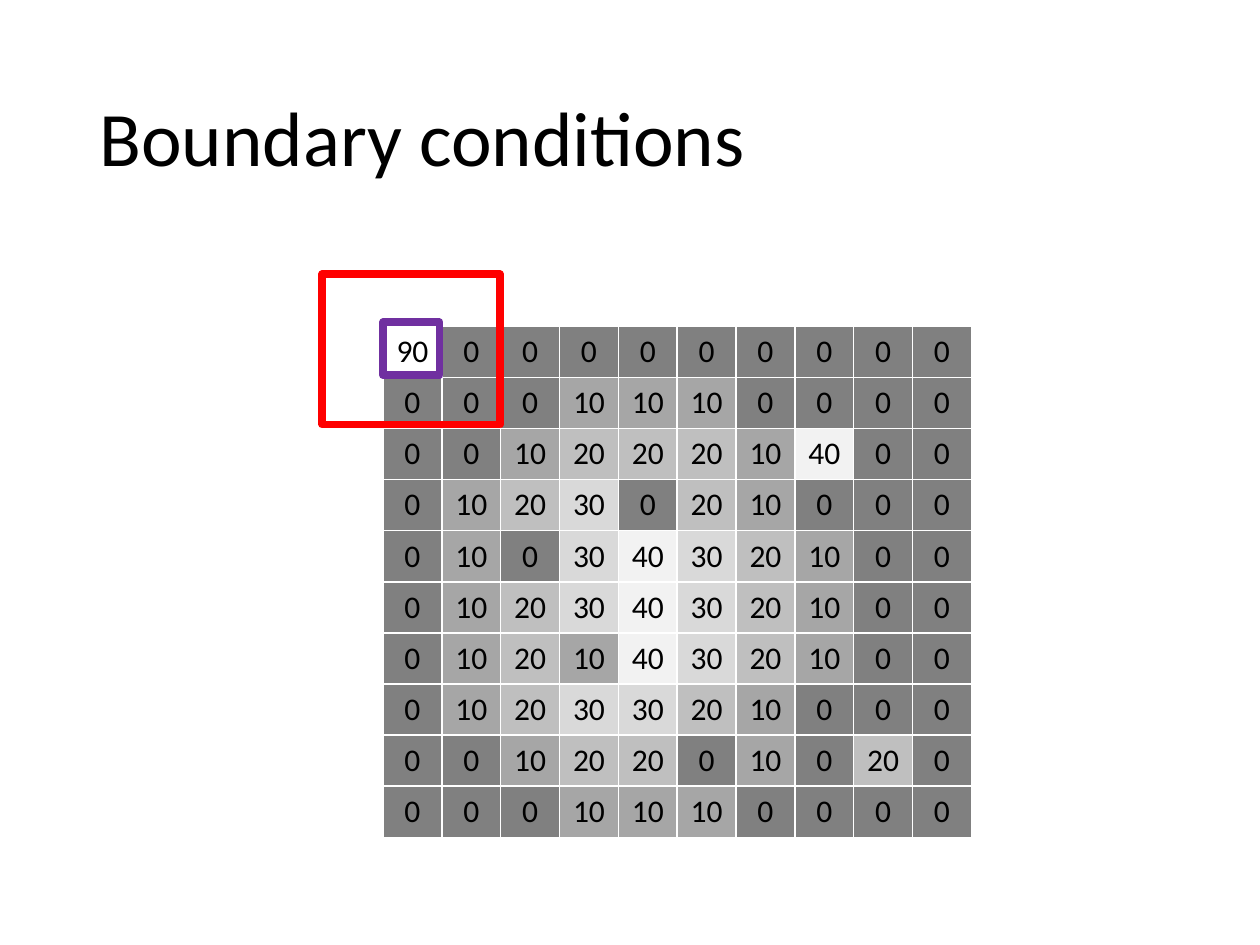
from dataclasses import dataclass

from lxml import etree
from pptx import Presentation
from pptx import util as u
from pptx.dml.color import RGBColor
from pptx.enum import shapes, text
from pptx.oxml import ns

COLORS = {"text": "000000", "border": "FFFFFF", "pixel": "7030A0", "window": "FF0000"}
GRAYS = {0: "808080", 10: "A6A6A6", 20: "BFBFBF", 30: "D9D9D9", 40: "F2F2F2", 90: "FFFFFF"}
FONT = "Calibri"

PIXELS = [
    [90, 0, 0, 0, 0, 0, 0, 0, 0, 0],
    [0, 0, 0, 10, 10, 10, 0, 0, 0, 0],
    [0, 0, 10, 20, 20, 20, 10, 40, 0, 0],
    [0, 10, 20, 30, 0, 20, 10, 0, 0, 0],
    [0, 10, 0, 30, 40, 30, 20, 10, 0, 0],
    [0, 10, 20, 30, 40, 30, 20, 10, 0, 0],
    [0, 10, 20, 10, 40, 30, 20, 10, 0, 0],
    [0, 10, 20, 30, 30, 20, 10, 0, 0, 0],
    [0, 0, 10, 20, 20, 0, 10, 0, 20, 0],
    [0, 0, 0, 10, 10, 10, 0, 0, 0, 0],
]


@dataclass
class Grid:
    left: float
    top: float
    column: float
    row: float


@dataclass
class Frame:
    """An outline placed in columns and rows of the pixel grid."""
    column: float
    row: float
    columns: float
    rows: float
    color: str


GRID = Grid(left=3.04, top=2.59, column=0.467, row=0.4)
FRAMES = [
    Frame(0, -0.08, 0.96, 1.05, "pixel"),
    Frame(-1.03, -1.03, 3.02, 2.98, "window"),
]


def format_paragraph(para, size: float, align) -> None:
    para.alignment = align
    for span in para.runs:
        span.font.name = FONT
        span.font.size = u.Pt(size)
        span.font.color.rgb = RGBColor.from_string(COLORS["text"])


def add_title(deck, page, words: str) -> None:
    title = page.shapes.title
    width, height = deck.slide_width, deck.slide_height
    title.left, title.top = int(width * 0.069), int(height * 0.053)
    title.width, title.height = int(width * 0.862), int(height * 0.193)
    title.text_frame.text = words
    title.text_frame.vertical_anchor = text.MSO_ANCHOR.MIDDLE
    para = title.text_frame.paragraphs[0]
    para.line_spacing = 0.9
    format_paragraph(para, 44, text.PP_ALIGN.LEFT)


def add_borders(cell, color: str, points: float) -> None:
    properties = cell._tc.get_or_add_tcPr()
    for position, side in enumerate(("lnL", "lnR", "lnT", "lnB")):
        line = etree.Element(ns.qn(f"a:{side}"), w=str(u.Pt(points)))
        fill = etree.SubElement(line, ns.qn("a:solidFill"))
        etree.SubElement(fill, ns.qn("a:srgbClr"), val=color)
        properties.insert(position, line)  # borders come before the fill


def add_pixel_table(page, grid: Grid, pixels: list[list[int]]) -> None:
    rows, columns = len(pixels), len(pixels[0])
    table = page.shapes.add_table(
        rows, columns, u.Inches(grid.left), u.Inches(grid.top),
        u.Inches(columns * grid.column), u.Inches(rows * grid.row)).table
    table.first_row = table.horz_banding = False
    for r, values in enumerate(pixels):
        for c, value in enumerate(values):
            cell = table.cell(r, c)
            cell.text = str(value)
            format_paragraph(cell.text_frame.paragraphs[0], 18, text.PP_ALIGN.CENTER)
            cell.fill.solid()
            cell.fill.fore_color.rgb = RGBColor.from_string(GRAYS[value])
            add_borders(cell, COLORS["border"], 1)


def add_frame(page, grid: Grid, frame: Frame) -> None:
    box = page.shapes.add_shape(
        shapes.MSO_SHAPE.RECTANGLE,
        u.Inches(grid.left + frame.column * grid.column),
        u.Inches(grid.top + frame.row * grid.row),
        u.Inches(frame.columns * grid.column), u.Inches(frame.rows * grid.row))
    box.shadow.inherit = False
    box.fill.background()
    box.line.color.rgb = RGBColor.from_string(COLORS[frame.color])
    box.line.width = u.Pt(4.5)


def main() -> None:
    deck = Presentation()
    deck.slide_width, deck.slide_height = u.Inches(10), u.Inches(7.5)
    page = deck.slides.add_slide(deck.slide_layouts[5])

    # Title
    add_title(deck, page, "Boundary conditions")
    # Image values
    add_pixel_table(page, GRID, PIXELS)
    # Corner pixel and the filter window around it
    for frame in FRAMES:
        add_frame(page, GRID, frame)

    deck.save("out.pptx")


if __name__ == "__main__":
    main()
